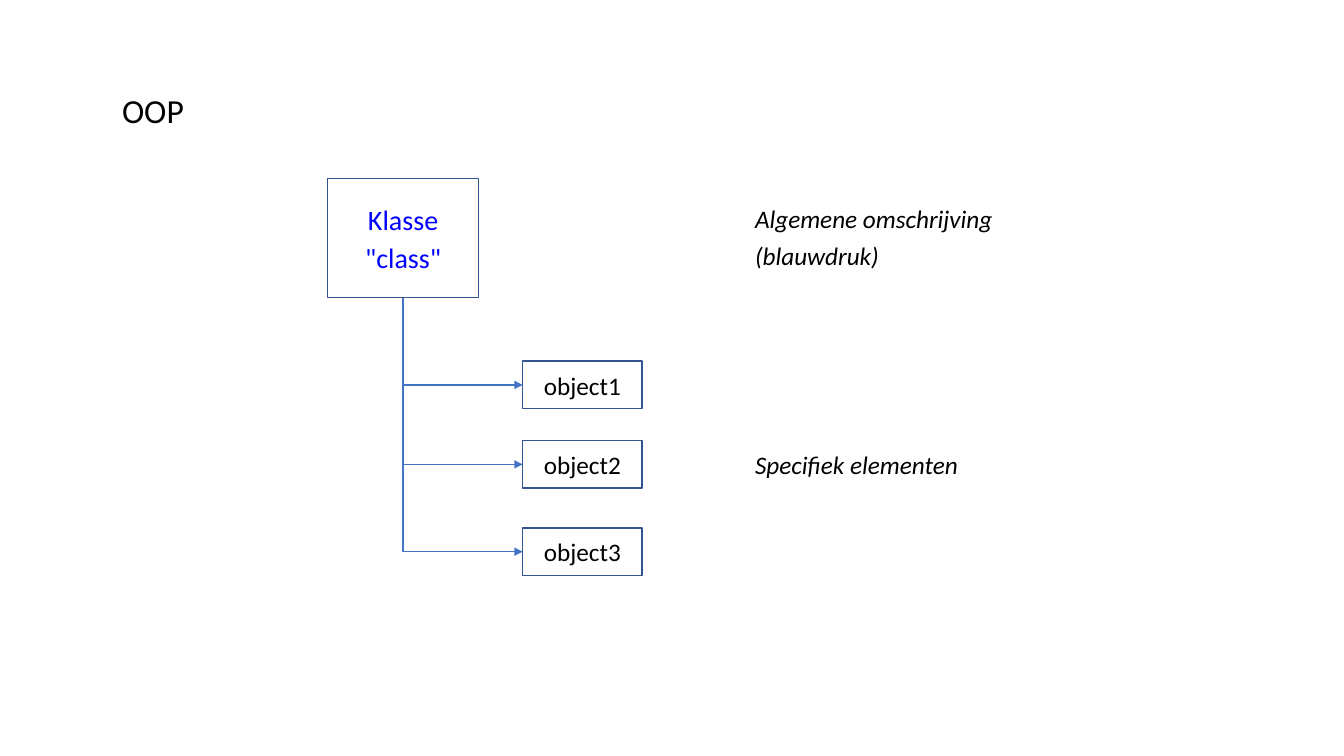
from lxml import etree
from pptx import Presentation, util as u
from pptx.dml.color import RGBColor
from pptx.enum import shapes, text
from pptx.oxml.ns import qn

SLIDE = (0, 0, u.Inches(13.33), u.Inches(7.5))


def rgb(value):
    return RGBColor.from_string(value)


def part(box, x, y, w, h):
    """Return the area inside box given in percent of its size."""
    left, top, width, height = box
    return (int(left + width * x / 100), int(top + height * y / 100),
            int(width * w / 100), int(height * h / 100))


def write(sp, lines, size, color="000000", italic=False, gap=0,
          align=text.PP_ALIGN.LEFT, anchor=text.MSO_ANCHOR.MIDDLE):
    tf = sp.text_frame
    tf.word_wrap = False
    tf.auto_size = text.MSO_AUTO_SIZE.NONE
    tf.vertical_anchor = anchor
    for i, line in enumerate(lines):
        p = tf.add_paragraph() if i else tf.paragraphs[0]
        p.alignment = align
        p.space_before = u.Pt(gap if i else 0)
        r = p.add_run()
        r.text = line
        r.font.name = "Calibri"
        r.font.size = u.Pt(size)
        r.font.italic = italic
        r.font.color.rgb = rgb(color)


def outlined_box(s, box, lines, size, color="000000", gap=0):
    sp = s.shapes.add_shape(shapes.MSO_SHAPE.RECTANGLE, *box)
    sp.shadow.inherit = False
    sp.fill.background()
    sp.line.color.rgb = rgb("325491")
    sp.line.width = u.Pt(1)
    write(sp, lines, size, color, gap=gap, align=text.PP_ALIGN.CENTER)


def branch(s, x1, y1, x2, y2):
    """Draw an arrow that runs down from (x1, y1), then right to (x2, y2)."""
    cx, cy = (x1 + x2) // 2, (y1 + y2) // 2
    dx, dy = (x2 - x1) // 2, (y2 - y1) // 2
    line = s.shapes.add_connector(shapes.MSO_CONNECTOR.ELBOW,
                                  cx + dy, cy - dx, cx - dy, cy + dx)
    line.line.color.rgb = rgb("4472C4")
    line.line.width = u.Pt(1)
    sp_pr = line._element.spPr
    sp_pr.find(qn("a:xfrm")).set("rot", str(270 * 60000))
    sp_pr.find(qn("a:prstGeom")).set("prst", "bentConnector2")
    etree.SubElement(sp_pr.find(qn("a:ln")), qn("a:tailEnd"), type="triangle")
    etree.SubElement(sp_pr, qn("a:effectLst"))


def title(s, box):
    sp = s.shapes.title
    sp.left, sp.top, sp.width, sp.height = box
    write(sp, ["OOP"], 24)


def class_tree(s, box):
    class_box = part(box, 0, 0, 48, 30)
    outlined_box(s, class_box, ["Klasse", '"class"'], 20, "0000FF", gap=3)
    left, top, width, height = class_box
    for number, y in enumerate((46, 66, 88), 1):
        object_box = part(box, 62, y, 38, 12)
        outlined_box(s, object_box, [f"object{number}"], 18)
        branch(s, left + width // 2, top + height,
               object_box[0], object_box[1] + object_box[3] // 2)


def notes_column(s, box):
    for y, h, lines in ((0, 27, ["Algemene omschrijving", "(blauwdruk)"]),
                        (86, 14, ["Specifiek elementen"])):
        sp = s.shapes.add_textbox(*part(box, 0, y, 100, h))
        write(sp, lines, 18, italic=True, gap=4.7, anchor=text.MSO_ANCHOR.TOP)


def main():
    prs = Presentation()
    prs.slide_width, prs.slide_height = SLIDE[2:]
    s = prs.slides.add_slide(prs.slide_layouts[5])
    title(s, part(SLIDE, 8.33, 11.2, 6.15, 6.67))
    class_tree(s, part(SLIDE, 24.38, 23.6, 23.4, 52.53))
    notes_column(s, part(SLIDE, 55.44, 26.27, 19.5, 37.73))
    prs.save("out.pptx")


if __name__ == "__main__":
    main()
